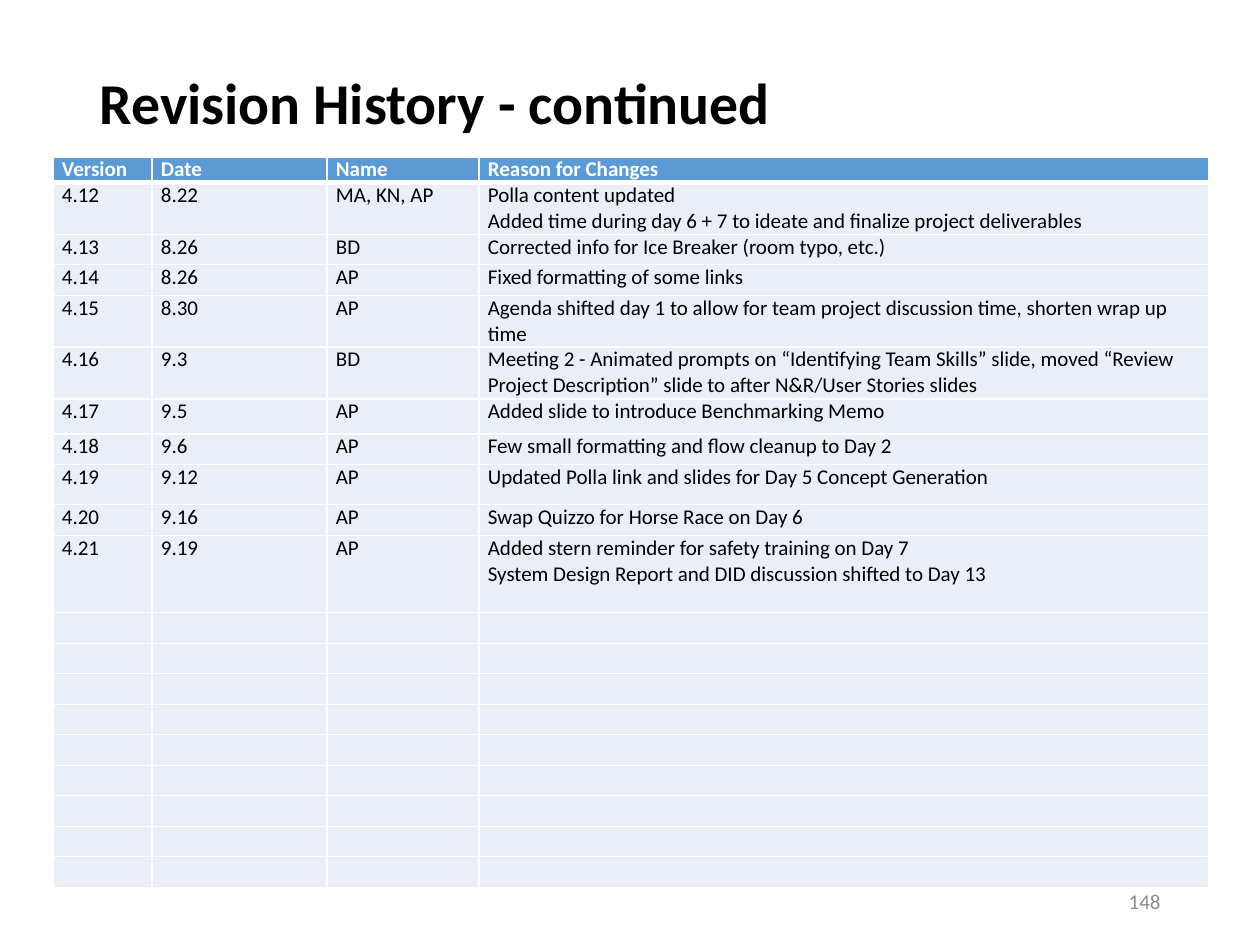
from lxml import etree
from pptx import Presentation
from pptx import util as u
from pptx.dml.color import RGBColor
from pptx.enum import text
from pptx.oxml import ns

PX = 914400 // 126
COLORS = {
    "title": "000000",
    "header": "5B9BD5",
    "header_text": "FFFFFF",
    "body": "EAEFF7",
    "body_text": "000000",
    "border": "FFFFFF",
    "number": "8C8C8C",
}
COLUMN_WIDTHS = [99, 175, 152, 730]
HEADER = ("Version", "Date", "Name", "Reason for Changes")
HEADER_HEIGHT = 25
# Row height, then the text of each column; a reason may hold several paragraphs.
REVISIONS = [
    (52, "4.12", "8.22", "MA, KN, AP",
     "Polla content updated\n"
     "Added time during day 6 + 7 to ideate and finalize project deliverables"),
    (30, "4.13", "8.26", "BD", "Corrected info for Ice Breaker (room typo, etc.)"),
    (31, "4.14", "8.26", "AP", "Fixed formatting of some links"),
    (51, "4.15", "8.30", "AP",
     "Agenda shifted day 1 to allow for team project discussion time, "
     "shorten wrap up time"),
    (52, "4.16", "9.3", "BD",
     "Meeting 2 - Animated prompts on “Identifying Team Skills” slide, moved "
     "“Review Project Description” slide to after N&R/User Stories slides"),
    (35, "4.17", "9.5", "AP", "Added slide to introduce Benchmarking Memo"),
    (31, "4.18", "9.6", "AP", "Few small formatting and flow cleanup to Day 2"),
    (40, "4.19", "9.12", "AP",
     "Updated Polla link and slides for Day 5 Concept Generation"),
    (31, "4.20", "9.16", "AP", "Swap Quizzo for Horse Race on Day 6"),
    (77, "4.21", "9.19", "AP",
     "Added stern reminder for safety training on Day 7\n"
     "System Design Report and DID discussion shifted to Day 13"),
]
EMPTY_ROWS = [(30 + (index + 1) % 2, "", "", "", "") for index in range(9)]


class SlideBuilder:
    font = "Calibri"
    text_size = 12

    def __init__(self, slide):
        self.slide = slide

    def add_run(self, paragraph, words, color, size=text_size, bold=False):
        run = paragraph.add_run()
        run.text = words
        run.font.name = self.font
        run.font.size = u.Pt(size)
        run.font.bold = bold
        run.font.color.rgb = RGBColor.from_string(COLORS[color])

    def title(self, words, left, top, width, height, bottom_inset):
        shape = self.slide.shapes.title
        shape.left, shape.top = left * PX, top * PX
        shape.width, shape.height = width * PX, height * PX
        frame = shape.text_frame
        frame.auto_size = text.MSO_AUTO_SIZE.NONE
        frame.vertical_anchor = text.MSO_ANCHOR.MIDDLE
        frame.margin_bottom = bottom_inset * PX
        paragraph = frame.paragraphs[0]
        paragraph.alignment = text.PP_ALIGN.LEFT
        paragraph.line_spacing = 0.9
        self.add_run(paragraph, words, "title", size=33, bold=True)

    def border(self, cell, side, points):
        properties = cell._tc.get_or_add_tcPr()
        line = etree.SubElement(properties, ns.qn(f"a:ln{side}"), w=str(u.Pt(points)))
        fill = etree.SubElement(line, ns.qn("a:solidFill"))
        etree.SubElement(fill, ns.qn("a:srgbClr"), val=COLORS["border"])

    def cell(self, cell, words, style, top_line, bottom_line):
        for side, points in zip("LRTB", (1, 1, top_line, bottom_line)):
            self.border(cell, side, points)
        cell.fill.solid()
        cell.fill.fore_color.rgb = RGBColor.from_string(COLORS[style])
        cell.margin_left = cell.margin_right = 9 * PX
        cell.margin_top = cell.margin_bottom = 0
        frame = cell.text_frame
        for index, line in enumerate(words.split("\n")):
            paragraph = frame.add_paragraph() if index else frame.paragraphs[0]
            if line:
                self.add_run(paragraph, line, f"{style}_text", bold=style == "header")
            else:
                # An empty cell needs its own text size, or its row grows.
                etree.SubElement(paragraph._p, ns.qn("a:endParaRPr"),
                                 sz=str(self.text_size * 100))

    def table(self, left, top, widths, rows):
        heights = [row[0] for row in rows]
        table = self.slide.shapes.add_table(
            len(rows), len(widths), left * PX, top * PX,
            sum(widths) * PX, sum(heights) * PX).table
        table.horz_banding = False
        for column, width in zip(table.columns, widths):
            column.width = width * PX
        for index, (height, *words) in enumerate(rows):
            table.rows[index].height = height * PX
            style = "body" if index else "header"
            top_line = 3 if index == 1 else 1
            bottom_line = 1 if index else 3
            for column, entry in enumerate(words):
                self.cell(table.cell(index, column), entry, style, top_line, bottom_line)

    def slide_number(self, words, left, top, width, height):
        shape = self.slide.shapes.add_textbox(left * PX, top * PX, width * PX, height * PX)
        frame = shape.text_frame
        frame.word_wrap = True
        frame.vertical_anchor = text.MSO_ANCHOR.MIDDLE
        frame.paragraphs[0].alignment = text.PP_ALIGN.RIGHT
        self.add_run(frame.paragraphs[0], words, "number")


def main():
    presentation = Presentation()
    presentation.slide_width, presentation.slide_height = u.Inches(10), u.Inches(7.5)
    title_only = presentation.slide_layouts[5]
    builder = SlideBuilder(presentation.slides.add_slide(title_only))
    builder.title("Revision History - continued", 87, 50, 1086, 186, bottom_inset=80)
    builder.table(53, 157, COLUMN_WIDTHS,
                  [(HEADER_HEIGHT, *HEADER), *REVISIONS, *EMPTY_ROWS])
    builder.slide_number("148", 890, 876, 283, 50)
    presentation.save("out.pptx")


if __name__ == "__main__":
    main()
